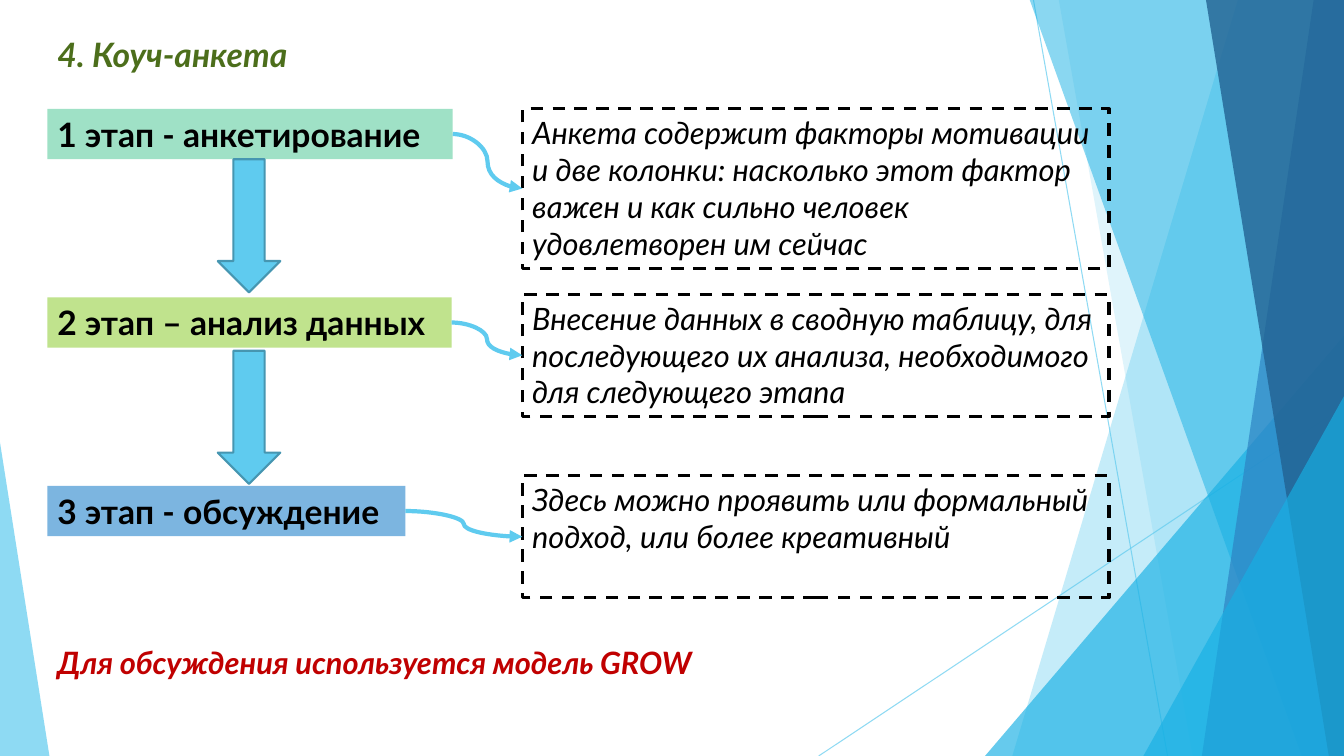
import pptx
import pptx.util
import pptx.dml.color
import pptx.enum.dml
import pptx.enum.shapes
import pptx.enum.text
import pptx.oxml.ns
from lxml import etree

Inches = pptx.util.Inches
SHAPE = pptx.enum.shapes.MSO_SHAPE
CONNECTOR = pptx.enum.shapes.MSO_CONNECTOR
qn = pptx.oxml.ns.qn

COLORS = {
    "sky": "5FCBEF", "cyan": "17B0E4", "blue": "2E83C3", "navy": "226292",
    "mint": "9FE1C6", "lime": "C0E38D", "steel": "7CB5E0", "edge": "4696B1",
    "green": "4C6E1B", "red": "C00000", "black": "000000",
}
WIDTH, HEIGHT, BLEED = 13.33, 7.5, -0.01

RAYS = [((10.25, 0), (11.58, HEIGHT)), ((WIDTH, 4.03), (8.12, HEIGHT))]
FACETS = [
    ("band", 12.28, 10.04, "sky", 36),
    ("band", 10.5, 11.83, "sky", 20),
    ("triangle", 9.77, 3.33, WIDTH - 9.77, 1, "cyan", 66),
    ("band", 10.21, 12.91, "cyan", 50),
    ("band", 13.03, 11.92, "blue", 70),
    ("band", 11.96, 13.18, "navy", 80),
    ("triangle", 11.34, 3.93, WIDTH - 11.34, 1, "cyan", 66),
    ("triangle", 0, 4.39, 0.49, 0, "sky", 70),
]
TITLE = "4. Коуч-анкета"
FOOTER = "Для обсуждения используется модель GROW"
STAGES = [
    ("1 этап - анкетирование", 4.02, "mint", 1.08, 1.58,
     "Анкета содержит факторы мотивации и две колонки: насколько этот фактор "
     "важен и как сильно человек удовлетворен им сейчас"),
    ("2 этап – анализ данных", 4.01, "lime", 2.92, 1.21,
     "Внесение данных в сводную таблицу, для последующего их анализа, "
     "необходимого для следующего этапа"),
    ("3 этап - обсуждение", 3.55, "steel", 4.72, 1.21,
     "Здесь можно проявить или формальный подход, или более креативный"),
]
LEFT, STAGE_TOP, STAGE_STEP, STAGE_HEIGHT = 0.47, 1.08, 1.87, 0.5
NOTE_LEFT, NOTE_WIDTH = 5.18, 5.82
ARROW_LEFT, ARROW_WIDTH, ARROW_HEIGHT = 2.16, 0.62, 1.32
ARROW_TOPS = [1.58, 3.48]


def rgb(name):
    return pptx.dml.color.RGBColor.from_string(COLORS[name])


def set_alpha(shape, percent):
    color = shape._element.spPr.find(".//" + qn("a:solidFill"))[0]
    etree.SubElement(color, qn("a:alpha"), val=str(percent * 1000))


def paint(shape, fill=None, line=None, weight=1.0, dash=False, alpha=None):
    shape.shadow.inherit = False
    if fill:
        shape.fill.solid()
        shape.fill.fore_color.rgb = rgb(fill)
        if alpha:
            set_alpha(shape, alpha)
    else:
        shape.fill.background()
    if line:
        shape.line.color.rgb = rgb(line)
        shape.line.width = pptx.util.Pt(weight)
        if dash:
            shape.line.dash_style = pptx.enum.dml.MSO_LINE.DASH
    else:
        shape.line.fill.background()


def add_shape(page, kind, left, top, width, height, **look):
    shape = page.shapes.add_shape(
        kind, Inches(left), Inches(top), Inches(width), Inches(height))
    paint(shape, **look)
    return shape


def add_band(page, top_x, bottom_x, color, alpha):
    builder = page.shapes.build_freeform(Inches(top_x), Inches(BLEED))
    corners = [(WIDTH, BLEED), (WIDTH, HEIGHT), (bottom_x, HEIGHT)]
    builder.add_line_segments([(Inches(x), Inches(y)) for x, y in corners])
    paint(builder.convert_to_shape(), fill=color, alpha=alpha)


def add_triangle(page, left, top, width, apex, color, alpha):
    triangle = add_shape(page, SHAPE.ISOSCELES_TRIANGLE, left, top, width,
                         HEIGHT - top, fill=color, alpha=alpha)
    triangle.adjustments[0] = apex


def add_line(page, kind, start, end, weight):
    line = page.shapes.add_connector(
        kind, *[Inches(value) for value in (*start, *end)])
    line.line.color.rgb = rgb("sky")
    line.line.width = pptx.util.Pt(weight)
    etree.SubElement(line._element.spPr, qn("a:effectLst"))
    return line


def write(box, text, size=24, color="black", bold=False, italic=False, wrap=False):
    frame = box.text_frame
    frame.word_wrap = wrap
    frame.vertical_anchor = pptx.enum.text.MSO_ANCHOR.TOP
    para = frame.paragraphs[0]
    para.alignment = pptx.enum.text.PP_ALIGN.LEFT
    span = para.add_run()
    span.text = text
    font = span.font
    font.name, font.size = "Lato", pptx.util.Pt(size)
    font.bold, font.italic = bold, italic
    font.color.rgb = rgb(color)


def add_label(page, top, width, height, text, **style):
    box = page.shapes.add_textbox(
        Inches(LEFT), Inches(top), Inches(width), Inches(height))
    write(box, text, bold=True, italic=True, **style)


def add_backdrop(page):
    for start, end in RAYS:
        ray = add_line(page, CONNECTOR.STRAIGHT, start, end, 0.75)
        set_alpha(ray, 70)
    for kind, *details in FACETS:
        if kind == "band":
            add_band(page, *details)
        else:
            add_triangle(page, *details)


def add_stages(page):
    for index, (name, width, color, note_top, note_height, text) in enumerate(STAGES):
        top = STAGE_TOP + index * STAGE_STEP
        stage = add_shape(page, SHAPE.RECTANGLE, LEFT, top, width, STAGE_HEIGHT,
                          fill=color)
        write(stage, name, bold=True)
        note = add_shape(page, SHAPE.RECTANGLE, NOTE_LEFT, note_top, NOTE_WIDTH,
                         note_height, line="black", weight=2.25, dash=True)
        write(note, text, size=22, italic=True, wrap=True)
        link = add_line(page, CONNECTOR.CURVE, (LEFT + width, top + STAGE_HEIGHT / 2),
                        (NOTE_LEFT, note_top + note_height / 2), 3)
        link.begin_connect(stage, 3)
        link.end_connect(note, 1)
        outline = link._element.spPr.find(qn("a:ln"))
        etree.SubElement(outline, qn("a:tailEnd"), type="triangle")
    for top in ARROW_TOPS:
        add_shape(page, SHAPE.DOWN_ARROW, ARROW_LEFT, top, ARROW_WIDTH, ARROW_HEIGHT,
                  fill="sky", line="edge", weight=1.5)


def main():
    """Build the slide on the three stages of the coaching survey."""
    deck = pptx.Presentation()
    deck.slide_width, deck.slide_height = Inches(WIDTH), Inches(HEIGHT)
    page = deck.slides.add_slide(deck.slide_layouts[6])
    add_backdrop(page)
    add_label(page, 0.29, 2.76, 0.5, TITLE, color="green")
    add_stages(page)
    add_label(page, 6.34, 7.09, 0.47, FOOTER, size=22, color="red")
    deck.save("out.pptx")


if __name__ == "__main__":
    main()
